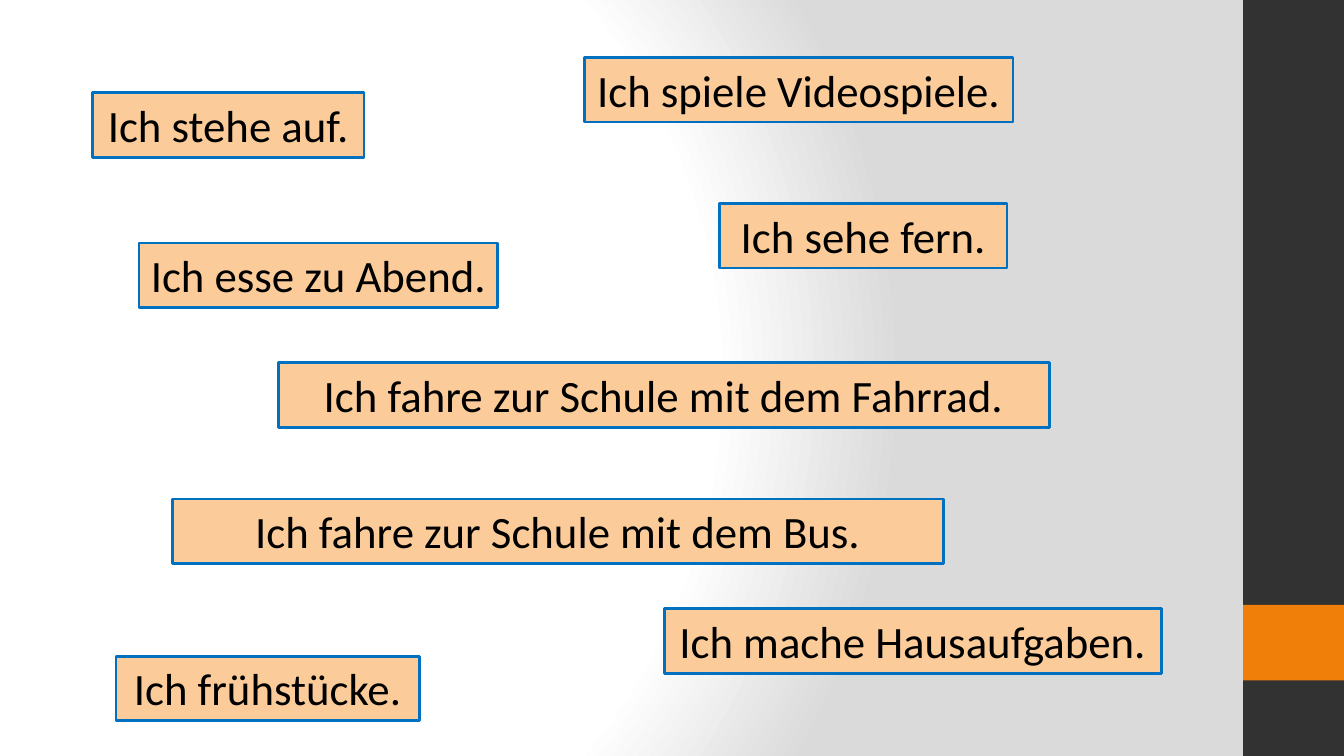
"""Build a slide of German daily-routine sentences scattered beside a dark sidebar."""
from lxml.etree import fromstring
from pptx import Presentation
from pptx.dml.color import RGBColor
from pptx.enum.shapes import MSO_SHAPE
from pptx.enum.text import MSO_ANCHOR, MSO_AUTO_SIZE, PP_ALIGN
from pptx.oxml.ns import nsdecls, qn
from pptx.util import Inches, Pt

COLOURS = {
    "white": "FFFFFF", "grey": "DADADA", "dark": "323232", "orange": "F07F09",
    "peach": "FBCC9A", "blue": "0070C0", "black": "000000",
}
FRAME_FORMAT = {
    "word_wrap": True,
    "auto_size": MSO_AUTO_SIZE.SHAPE_TO_FIT_TEXT,
    "vertical_anchor": MSO_ANCHOR.TOP,
}
FONT_FORMAT = {"name": "Calibri", "size": Pt(32)}
SENTENCE_HEIGHT = 8.53
SENTENCES = [
    ("Ich stehe auf.", 6.9, 12.27, 20.18),
    ("Ich frühstücke.", 8.63, 86.8, 22.58),
    ("Ich fahre zur Schule mit dem Fahrrad.", 20.7, 48, 57.38),
    ("Ich mache Hausaufgaben.", 49.43, 80.53, 36.98),
    ("Ich sehe fern.", 53.55, 26.93, 21.38),
    ("Ich esse zu Abend.", 10.35, 32.13, 26.7),
    ("Ich fahre zur Schule mit dem Bus.", 12.83, 66, 57.38),
    ("Ich spiele Videospiele.", 43.5, 7.6, 31.88),
]


def colour(name):
    """Return the named colour."""
    return RGBColor.from_string(COLOURS[name])


def apply_format(target, values):
    """Set each attribute named in values on the target."""
    for name, value in values.items():
        setattr(target, name, value)


class SlideBuilder:
    """Draw styled elements placed in percent of the slide's size."""

    def __init__(self, deck):
        """Add a blank page to the deck."""
        self.deck = deck
        self.page = deck.slides.add_slide(deck.slide_layouts[6])

    def background(self, stops):
        """Fill the page with a radial gradient centred on the left."""
        self.page.background.fill.solid()
        solid = self.page.element.find(".//" + qn("p:bgPr")).find(qn("a:solidFill"))
        marks = "".join(
            f'<a:gs pos="{share * 1000}"><a:srgbClr val="{COLOURS[name]}"/></a:gs>'
            for share, name in stops
        )
        gradient = fromstring(
            f'<a:gradFill {nsdecls("a")} rotWithShape="1"><a:gsLst>{marks}</a:gsLst>'
            '<a:path path="circle"><a:fillToRect l="20000" t="50000" r="100000" b="50000"/>'
            "</a:path></a:gradFill>"
        )
        solid.getparent().replace(solid, gradient)

    def panel(self, left, top, width, height, fill):
        """Add a plain filled rectangle."""
        across, down = self.deck.slide_width / 100, self.deck.slide_height / 100
        box = self.page.shapes.add_shape(
            MSO_SHAPE.RECTANGLE,
            round(left * across), round(top * down),
            round(width * across), round(height * down),
        )
        box.shadow.inherit = False
        box.fill.solid()
        box.fill.fore_color.rgb = colour(fill)
        box.line.fill.background()
        return box

    def sentence(self, text, left, top, width):
        """Add an outlined box holding one centred sentence."""
        box = self.panel(left, top, width, SENTENCE_HEIGHT, "peach")
        box.line.color.rgb = colour("blue")
        box.line.width = Pt(2)
        apply_format(box.text_frame, FRAME_FORMAT)
        para = box.text_frame.paragraphs[0]
        para.alignment = PP_ALIGN.CENTER
        span = para.add_run()
        span.text = text
        apply_format(span.font, FONT_FORMAT)
        span.font.color.rgb = colour("black")


def main():
    """Build and save the deck."""
    deck = Presentation()
    apply_format(deck, {"slide_width": Inches(13.33), "slide_height": Inches(7.5)})
    builder = SlideBuilder(deck)
    builder.background([(0, "white"), (75, "white"), (100, "grey")])
    builder.panel(92.5, 0, 7.5, 100, "dark")
    builder.panel(92.5, 80, 7.5, 10, "orange")
    for sentence in SENTENCES:
        builder.sentence(*sentence)
    deck.save("out.pptx")


if __name__ == "__main__":
    main()
